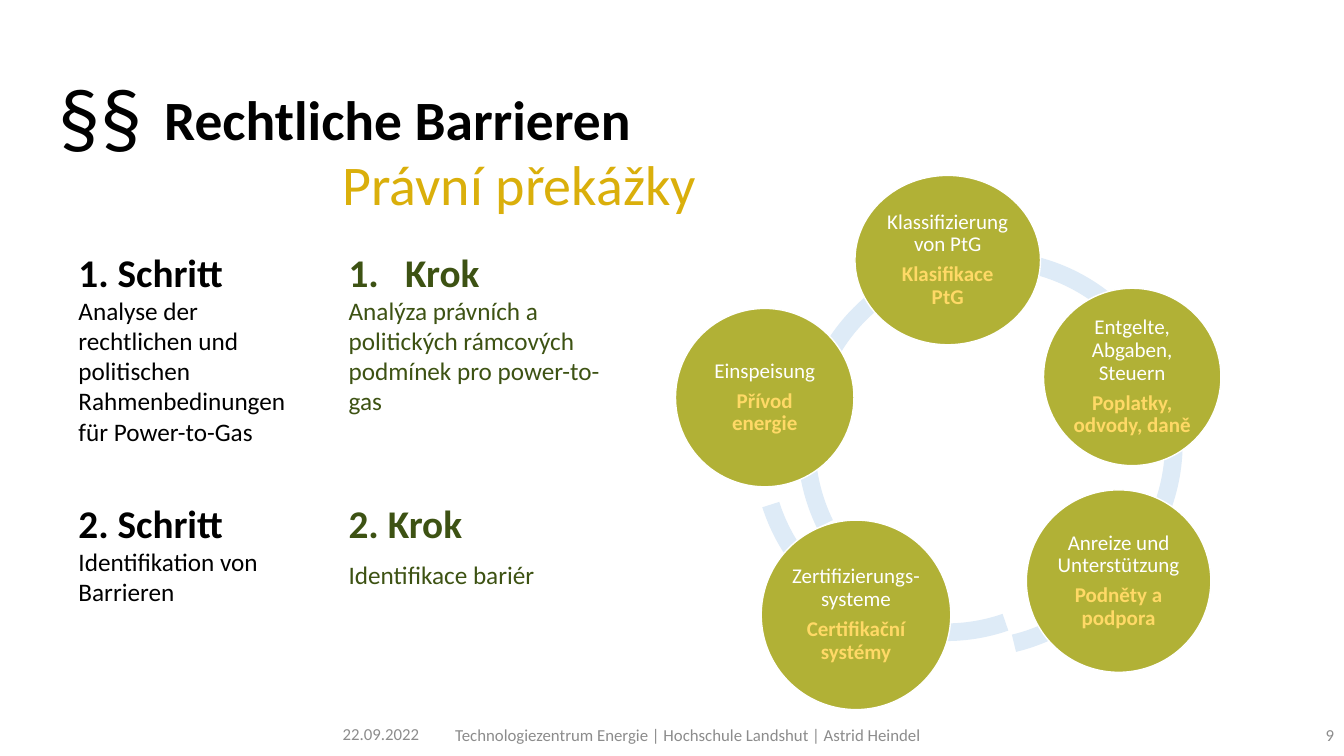
from lxml.etree import SubElement
from pptx import Presentation
from pptx.dml.color import RGBColor
from pptx.enum.shapes import MSO_SHAPE
from pptx.enum.text import MSO_ANCHOR, PP_ALIGN
from pptx.oxml.ns import qn
from pptx.util import Inches, Pt

BLACK = RGBColor(0x00, 0x00, 0x00)
WHITE = RGBColor(0xFF, 0xFF, 0xFF)
GRAY = RGBColor(0x8C, 0x8C, 0x8C)
GOLD = RGBColor(0xDA, 0xAF, 0x0B)
GREEN = RGBColor(0x3D, 0x52, 0x13)
OLIVE = RGBColor(0xB1, 0xB1, 0x36)
YELLOW = RGBColor(0xFF, 0xD9, 0x66)
PALE_BLUE = RGBColor(0xDE, 0xEB, 0xF7)
FONT = "Calibri"

# Headings: text, box (left, top, width, height), size, bold, colour, anchor
HEADINGS = [
    ("Rechtliche Barrieren", (1.53, 0.8, 10.62, 0.74), 39.6, True, BLACK, MSO_ANCHOR.MIDDLE),
    ("§§", (0.48, 0.58, 2.68, 2.86), 60, False, BLACK, MSO_ANCHOR.TOP),
    ("Právní překážky", (3.3, 1.43, 3.74, 0.82), 40, False, GOLD, MSO_ANCHOR.TOP),
]

# Steps: heading, body, box, colour, numbered heading, line spacing, space after
STEPS = [
    ("1. Schritt", "Analyse der rechtlichen und politischen Rahmenbedinungen für Power-to-Gas",
     (0.68, 2.41, 2.35, 2.09), BLACK, False, 1, 0),
    ("Krok", "Analýza právních a politických rámcových podmínek pro power-to-gas",
     (3.36, 2.41, 2.83, 2.56), GREEN, True, 1, 0),
    ("2. Schritt", "Identifikation von Barrieren",
     (0.68, 4.9, 2.11, 1.45), BLACK, False, 1, 0),
    ("2. Krok", "Identifikace bariér",
     (3.36, 4.87, 2.07, 1.48), GREEN, False, 1.07, 8),
]

# Ring: left, top, start angle, end angle
RING_SIZE = 3.82
RING_THICKNESS = 0.046
RING_ARCS = [
    (7.47, 2.54, 117.48, 162.24),
    (7.47, 2.54, 71.03, 117.55),
    (7.72, 2.7, 22.81, 76.46),
    (7.91, 2.49, 154.03, 28.15),
]

# Circles: German text, Czech text, box
CIRCLES = [
    ("Entgelte, Abgaben, Steuern", "Poplatky, odvody, daně", (10.35, 2.86, 1.76, 1.76)),
    ("Klassifizierung von PtG", "Klasifikace PtG", (8.48, 1.74, 1.84, 1.68)),
    ("Anreize und Unterstützung", "Podněty a podpora", (10.18, 4.86, 1.83, 1.81)),
    ("Zertifizierungs-systeme", "Certifikační systémy", (7.55, 5.16, 1.88, 1.88)),
    ("Einspeisung", "Přívod energie", (6.7, 3.06, 1.77, 1.77)),
]

FOOTERS = [
    ("22.09.2022", (3.3, 7.08, 1.03, 0.4), PP_ALIGN.LEFT),
    ("Technologiezentrum Energie | Hochschule Landshut | Astrid Heindel",
     (4.32, 7.09, 5.01, 0.4), PP_ALIGN.CENTER),
    ("9", (10.33, 7.09, 3, 0.4), PP_ALIGN.RIGHT),
]


def place(box):
    return [Inches(value) for value in box]


def write(shape, lines, anchor=MSO_ANCHOR.TOP, align=PP_ALIGN.LEFT,
          spacing=1, after=0, numbered=False):
    """Fill a shape with lines of (text, size, bold, colour)."""
    frame = shape.text_frame
    frame.word_wrap = True
    frame.vertical_anchor = anchor
    for index, (text, size, bold, color) in enumerate(lines):
        paragraph = frame.add_paragraph() if index else frame.paragraphs[0]
        paragraph.text = text
        paragraph.alignment = align
        paragraph.line_spacing = spacing
        paragraph.space_after = Pt(after)
        if numbered and index == 0:
            properties = paragraph._p.get_or_add_pPr()
            properties.set("marL", str(Inches(0.56)))
            properties.set("indent", str(-Inches(0.56)))
            SubElement(properties, qn("a:buFont"), typeface="+mj-lt")
            SubElement(properties, qn("a:buAutoNum"), type="arabicPeriod")
        font = paragraph.font
        font.name, font.size, font.bold = FONT, Pt(size), bold
        font.color.rgb = color


def add_shape(slide, kind, box, color):
    shape = slide.shapes.add_shape(kind, *place(box))
    shape.shadow.inherit = False
    shape.fill.solid()
    shape.fill.fore_color.rgb = color
    shape.line.fill.background()
    return shape


def main():
    presentation = Presentation()
    presentation.slide_width, presentation.slide_height = Inches(13.33), Inches(7.5)
    slide = presentation.slides.add_slide(presentation.slide_layouts[6])

    # Headings
    for text, box, size, bold, color, anchor in HEADINGS:
        write(slide.shapes.add_textbox(*place(box)), [(text, size, bold, color)], anchor)

    # Steps in two languages
    for heading, body, box, color, numbered, spacing, after in STEPS:
        lines = [(heading, 28, True, color), (body, 18, False, color)]
        write(slide.shapes.add_textbox(*place(box)), lines,
              spacing=spacing, after=after, numbered=numbered)

    # Ring behind the circles; angles are stored in 60000ths of a degree
    for left, top, start, end in RING_ARCS:
        arc = add_shape(slide, MSO_SHAPE.BLOCK_ARC, (left, top, RING_SIZE, RING_SIZE), PALE_BLUE)
        for index, value in enumerate((start * 0.6, end * 0.6, RING_THICKNESS)):
            arc.adjustments[index] = value

    # Circles
    for german, czech, box in CIRCLES:
        circle = add_shape(slide, MSO_SHAPE.OVAL, box, OLIVE)
        circle.line.color.rgb = WHITE
        circle.line.width = Pt(1)
        frame = circle.text_frame
        frame.margin_left = frame.margin_right = Inches(0.02)
        frame.margin_top = frame.margin_bottom = Inches(0.02)
        write(circle, [(german, 15, False, WHITE), (czech, 15, True, YELLOW)],
              MSO_ANCHOR.MIDDLE, PP_ALIGN.CENTER, 0.9, 5.25)

    # Footer
    for text, box, align in FOOTERS:
        write(slide.shapes.add_textbox(*place(box)), [(text, 12, False, GRAY)],
              MSO_ANCHOR.MIDDLE, align)

    presentation.save("out.pptx")


if __name__ == "__main__":
    main()
